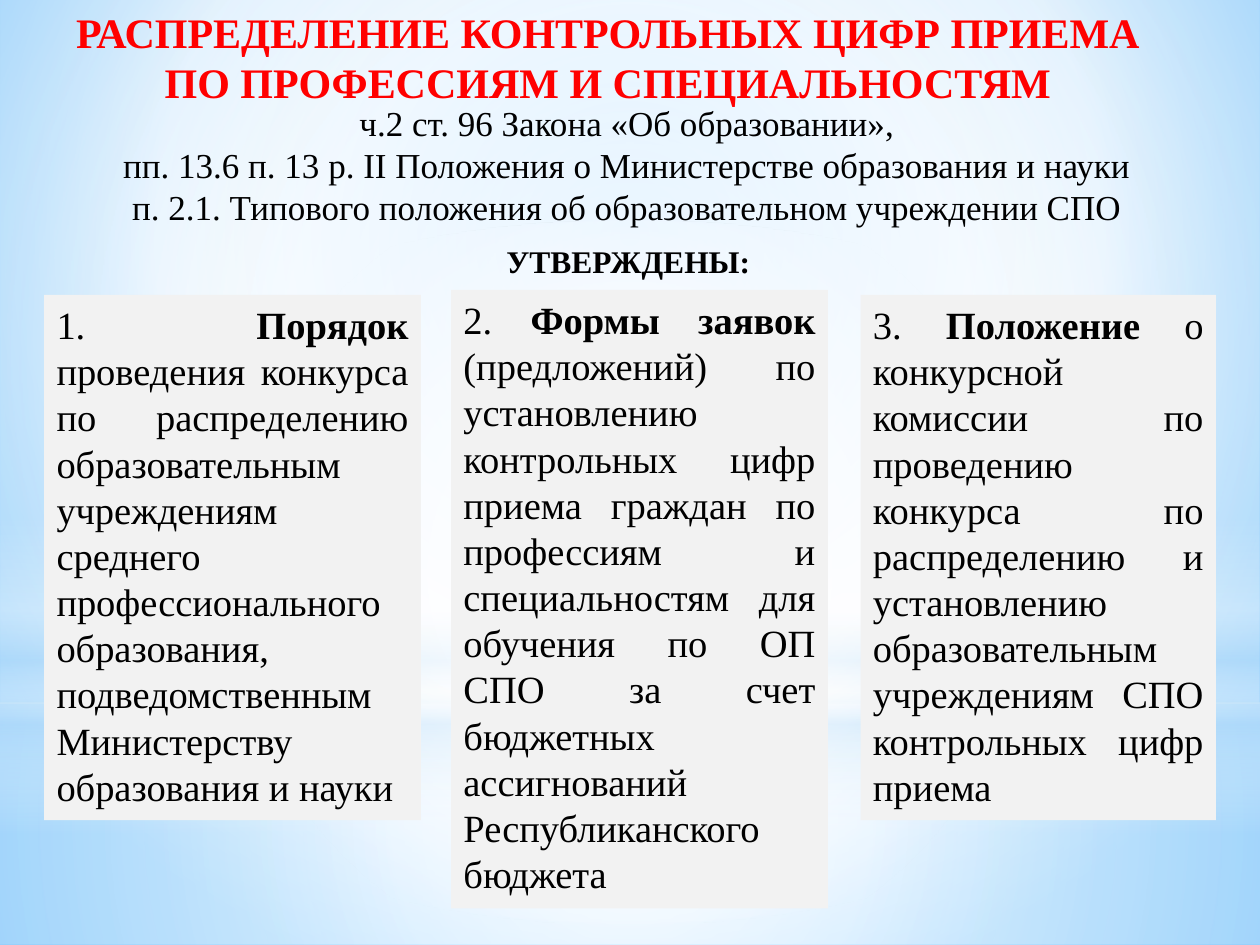
import pptx
import pptx.util
import pptx.oxml
import pptx.oxml.ns
from pptx.dml.color import RGBColor
from pptx.enum.shapes import MSO_SHAPE
from pptx.enum.text import MSO_ANCHOR, PP_ALIGN

Inches, Pt = pptx.util.Inches, pptx.util.Pt

FONT = "Times New Roman"
BLACK = RGBColor(0x00, 0x00, 0x00)
RED = RGBColor(0xFF, 0x00, 0x00)
PANEL = RGBColor(0xF2, 0xF2, 0xF2)
WHITE = RGBColor(0xFF, 0xFF, 0xFF)
PALE_BLUE = RGBColor(0xB4, 0xDC, 0xFA)
SKY = RGBColor(0x9E, 0xD5, 0xFF)
DEEP_SKY = RGBColor(0x5B, 0xB9, 0xFF)

# Gradient stops: position %, colour, opacity %. Focus: left, top, right, bottom %.
CENTRE = (50, 50, 50, 50)
BACKDROP = [(0, SKY, 100), (60, WHITE, 100), (100, DEEP_SKY, 100)]
BACKDROP_FOCUS = (20, 10, 20, 60)
GLOWS = [
    (MSO_SHAPE.RECTANGLE, (0, 5.58, 10, 1.92), CENTRE,
     [(0, WHITE, 91), (37, WHITE, 76), (100, PALE_BLUE, 79)]),
    (MSO_SHAPE.RECTANGLE, (0, 0, 10, 5.58), CENTRE,
     [(0, WHITE, 89), (48, WHITE, 62), (100, PALE_BLUE, 79)]),
    (MSO_SHAPE.RECTANGLE, (0, 4.12, 10, 2.5), None,
     [(0, WHITE, 0), (29, WHITE, 30), (45, PALE_BLUE, 40),
      (55, WHITE, 26), (65, PALE_BLUE, 60), (100, WHITE, 0)]),
    (MSO_SHAPE.OVAL, (0, 1.75, 10, 5.58), CENTRE,
     [(0, WHITE, 100), (56, WHITE, 0)]),
]

# Place, lines, format, alignment, wrap
HEADINGS = [
    ((0.2, 0.76, 9.55, 1.11),
     ["ч.2 ст. 96 Закона «Об образовании»,",
      "пп. 13.6 п. 13 р. II Положения о Министерстве образования и науки",
      "п. 2.1. Типового положения об образовательном учреждении СПО"],
     {"size": Pt(20)}, BLACK, PP_ALIGN.CENTER, True),
    ((0.1, 0, 9.45, 0.91),
     ["РАСПРЕДЕЛЕНИЕ КОНТРОЛЬНЫХ ЦИФР ПРИЕМА",
      "ПО ПРОФЕССИЯМ И СПЕЦИАЛЬНОСТЯМ"],
     {"size": Pt(24), "bold": True}, RED, PP_ALIGN.CENTER, True),
    ((3.92, 1.87, 2.16, 0.4), ["УТВЕРЖДЕНЫ:"],
     {"size": Pt(18), "bold": True}, BLACK, PP_ALIGN.LEFT, False),
]

DOCUMENTS = [
    ((0.35, 2.34, 2.99, 4.17), "Порядок",
     "проведения конкурса по распределению образовательным учреждениям "
     "среднего профессионального образования, подведомственным "
     "Министерству образования и науки"),
    ((3.58, 2.3, 2.99, 4.91), "Формы заявок",
     "(предложений) по установлению контрольных цифр приема граждан по "
     "профессиям и специальностям для обучения по ОП СПО за счет "
     "бюджетных ассигнований Республиканского бюджета"),
    ((6.83, 2.34, 2.82, 4.17), "Положение",
     "о конкурсной комиссии по проведению конкурса по распределению и "
     "установлению образовательным учреждениям СПО контрольных цифр приема"),
]


def set_gradient(fill, owner, stops, focus):
    """Give a fill a radial gradient, or a vertical one when focus is None."""
    fill.solid()
    solid = owner.xpath(".//a:solidFill")[0]
    gs = "".join(
        f'<a:gs pos="{pos * 1000}"><a:srgbClr val="{color}">'
        f'<a:alpha val="{alpha * 1000}"/></a:srgbClr></a:gs>'
        for pos, color, alpha in stops)
    if focus:
        sides = " ".join(f'{k}="{v * 1000}"' for k, v in zip("ltrb", focus))
        shade = f'<a:path path="circle"><a:fillToRect {sides}/></a:path>'
    else:
        shade = '<a:lin ang="5400000" scaled="0"/>'
    grad = pptx.oxml.parse_xml(
        f'<a:gradFill rotWithShape="1" {pptx.oxml.ns.nsdecls("a")}>'
        f'<a:gsLst>{gs}</a:gsLst>{shade}</a:gradFill>')
    solid.getparent().replace(solid, grad)


def add_plain_shape(s, kind, place):
    sp = s.shapes.add_shape(kind, *map(Inches, place))
    sp.shadow.inherit = False
    sp.line.fill.background()
    return sp


def add_run(p, text, fmt, color):
    r = p.add_run()
    r.text = text
    for name, value in {"name": FONT, **fmt}.items():
        setattr(r.font, name, value)
    r.font.color.rgb = color


def main():
    prs = pptx.Presentation()
    prs.slide_width, prs.slide_height = Inches(10), Inches(7.5)
    s = prs.slides.add_slide(prs.slide_layouts[6])

    set_gradient(s.background.fill, s.element, BACKDROP, BACKDROP_FOCUS)
    for kind, place, focus, stops in GLOWS:
        sp = add_plain_shape(s, kind, place)
        set_gradient(sp.fill, sp.element, stops, focus)

    for place, lines, fmt, color, align, wrap in HEADINGS:
        tf = s.shapes.add_textbox(*map(Inches, place)).text_frame
        tf.word_wrap = wrap
        for i, line in enumerate(lines):
            p = tf.add_paragraph() if i else tf.paragraphs[0]
            p.alignment = align
            add_run(p, line, fmt, color)

    for number, (place, name, rest) in enumerate(DOCUMENTS, 1):
        sp = add_plain_shape(s, MSO_SHAPE.RECTANGLE, place)
        sp.fill.solid()
        sp.fill.fore_color.rgb = PANEL
        tf = sp.text_frame
        tf.word_wrap = True
        tf.vertical_anchor = MSO_ANCHOR.TOP
        p = tf.paragraphs[0]
        p.alignment = PP_ALIGN.JUSTIFY
        for text, bold in [(f"{number}. ", False), (f"{name} ", True), (rest, False)]:
            add_run(p, text, {"size": Pt(22), "bold": bold}, BLACK)

    prs.save("out.pptx")


if __name__ == "__main__":
    main()
